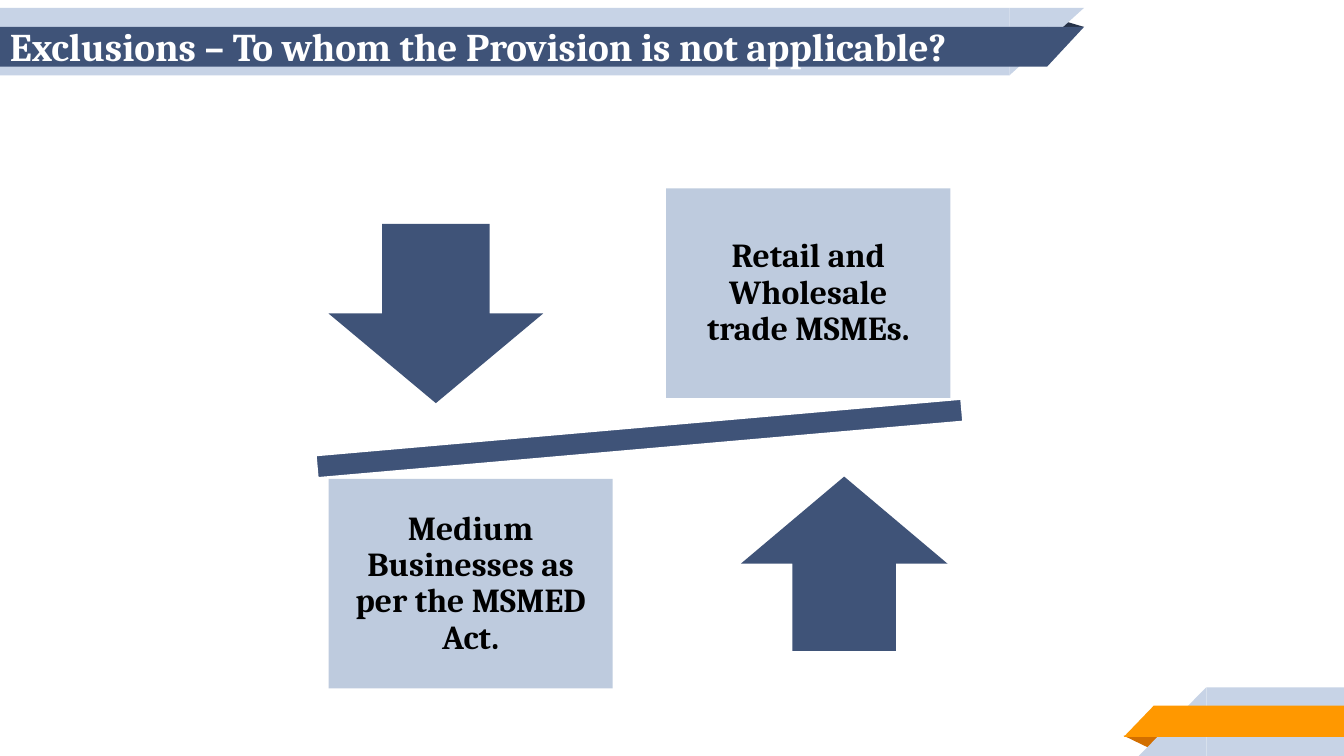
from pptx import Presentation
from pptx.dml.color import RGBColor
from pptx.enum.shapes import MSO_SHAPE
from pptx.enum.text import MSO_ANCHOR, MSO_AUTO_SIZE, PP_ALIGN
from pptx.util import Cm, Pt

RECT = MSO_SHAPE.RECTANGLE
CORNER = MSO_SHAPE.RIGHT_TRIANGLE
TRIANGLE = MSO_SHAPE.ISOSCELES_TRIANGLE
DOWN, UP, MINUS = MSO_SHAPE.DOWN_ARROW, MSO_SHAPE.UP_ARROW, MSO_SHAPE.MATH_MINUS
MIDDLE, NO_FIT = MSO_ANCHOR.MIDDLE, MSO_AUTO_SIZE.NONE
LEFT, CENTER = PP_ALIGN.LEFT, PP_ALIGN.CENTER

FONT = "Cambria"
COLORS = {
    "navy": "3F5378", "dark_navy": "263248", "pale": "C7D3E6", "panel": "BECBDE",
    "orange": "FF9800", "dark_orange": "D26F00", "white": "FFFFFF", "black": "000000",
}


def rgb(name):
    """Return the named colour."""
    return RGBColor.from_string(COLORS[name])


def add_shape(slide, kind, box, color, flip=None):
    """Add a flat filled shape in a box given in centimetres."""
    sp = slide.shapes.add_shape(kind, *(Cm(v) for v in box))
    sp.shadow.inherit = False
    sp.fill.solid()
    sp.fill.fore_color.rgb = rgb(color)
    sp.line.fill.background()
    if flip:
        sp._element.spPr.xfrm.set(flip, "1")
    return sp


def set_text(sp, text, size, color, align, inset):
    """Write one bold paragraph, vertically centred, and return it."""
    tf = sp.text_frame
    tf.text = text
    tf.word_wrap = True
    tf.auto_size = NO_FIT
    tf.vertical_anchor = MIDDLE
    tf.margin_left = tf.margin_right = tf.margin_top = tf.margin_bottom = Cm(inset)
    p = tf.paragraphs[0]
    p.alignment = align
    font = p.runs[0].font
    font.name, font.size, font.bold = FONT, Pt(size), True
    font.color.rgb = rgb(color)
    return p


def add_band_right(slide, box, tip, color):
    """Add a band whose right end slants inwards towards the bottom."""
    x, y, w, h = box
    add_shape(slide, RECT, (x, y, w - tip, h), color)
    add_shape(slide, CORNER, (x + w - tip, y, tip, h), color, "flipV")


def add_band_left(slide, box, tip, color):
    """Add a band whose left end slants inwards towards the top."""
    x, y, w, h = box
    add_shape(slide, RECT, (x + tip, y, w - tip, h), color)
    add_shape(slide, CORNER, (x, y, tip, h), color, "flipH")


def add_header(slide, box, text):
    """Build the title ribbon with the title on it."""
    x, y, w, h = box
    fold = add_shape(slide, TRIANGLE, (x + w - 1.88, y + 0.1, 1.88, 0.38), "dark_navy")
    fold.adjustments[0] = 0.32
    add_band_right(slide, box, 1.88, "pale")
    add_band_right(slide, (x, y + 0.48, w, 1), 0.93, "navy")
    title = slide.shapes.title
    title.left, title.top, title.width, title.height = (
        Cm(v) for v in (x, y + 0.13, w, 1.65))
    set_text(title, text, 28, "white", LEFT, 0.25)
    slide.shapes._spTree.append(title._element)


def add_corner(slide, box):
    """Build the orange ribbon in the bottom right corner."""
    x, y, w, h = box
    fold = add_shape(slide, TRIANGLE, (x, y + 1.22, 1, 0.33), "dark_orange", "flipV")
    fold.rotation = 0
    fold.adjustments[0] = 0.68
    add_band_left(slide, (x + 0.38, y, w - 0.38, h), 1.7, "pale")
    add_band_left(slide, (x, y + 0.46, w, 0.79), 0.76, "orange")


def add_panel(slide, box, text):
    """Add one labelled panel of the balance."""
    sp = add_shape(slide, RECT, box, "panel")
    p = set_text(sp, text, 24, "black", CENTER, 0.48)
    p.line_spacing = 0.9


def add_balance(slide, box, raised, lowered):
    """Build the tilted beam with its two panels and arrows."""
    x, y, w, h = box
    panel_w, panel_h = 7.16, 5.28
    beam_w, beam_h = 22.25, 2.54
    beam = add_shape(slide, MINUS, (x + (w - beam_w) / 2, y + (h - beam_h) / 2,
                                    beam_w, beam_h), "navy")
    beam.rotation = 355
    beam.line.color.rgb = rgb("white")
    beam.line.width = Pt(2)
    add_shape(slide, DOWN, (x, y + 0.89, 5.41, 4.52), "navy")
    add_panel(slide, (x + w - panel_w, y, panel_w, panel_h), raised)
    add_shape(slide, UP, (x + w - 5.28, y + h - 5.34, 5.21, 4.39), "navy")
    add_panel(slide, (x, y + h - panel_h, panel_w, panel_h), lowered)


def main():
    """Build and save the slide."""
    prs = Presentation()
    prs.slide_width, prs.slide_height = Cm(33.87), Cm(19.05)
    slide = prs.slides.add_slide(prs.slide_layouts[5])
    add_header(slide, (0, 0.2, 27.32, 1.7),
               "Exclusions – To whom the Provision is not applicable?")
    add_corner(slide, (28.32, 17.32, 5.55, 1.73))
    add_balance(slide, (8.28, 4.75, 15.67, 12.6),
                "Retail and Wholesale trade MSMEs.",
                "Medium Businesses as per the MSMED Act.")
    prs.save("out.pptx")


if __name__ == "__main__":
    main()
